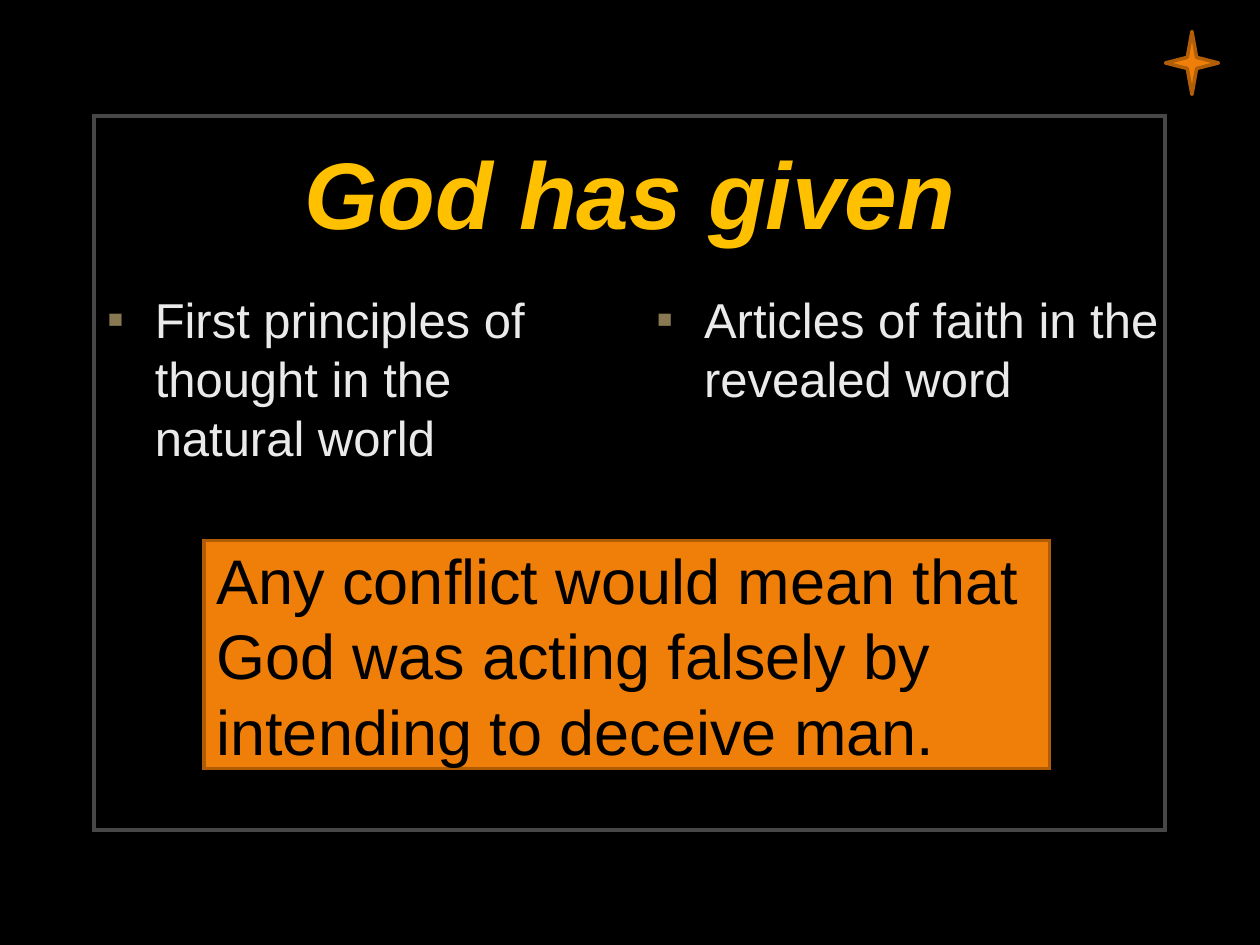
from dataclasses import dataclass

from lxml.etree import SubElement
from pptx import Presentation
from pptx.dml.color import RGBColor as Color
from pptx.enum.shapes import MSO_SHAPE as Preset
from pptx.enum.text import MSO_ANCHOR as Anchor, PP_ALIGN as Align
from pptx.oxml.ns import qn
from pptx.shapes.autoshape import Shape
from pptx.slide import Slide
from pptx.util import Inches, Pt


@dataclass(frozen=True)
class Theme:
    font: str = "Arial"
    background: str = "000000"
    frame: str = "474747"
    title: str = "FFC000"
    body: str = "EAEAEA"
    bullet: str = "887952"
    accent: str = "F07F09"
    callout_edge: str = "B05C05"
    star_edge: str = "B25E07"
    callout_text: str = "000000"
    title_size: float = 54
    body_size: float = 28
    callout_size: float = 36
    bullet_indent: float = 0.38


@dataclass(frozen=True)
class Area:
    left: float
    top: float
    width: float
    height: float

    def lengths(self) -> tuple[Inches, ...]:
        return tuple(map(Inches, (self.left, self.top, self.width, self.height)))


@dataclass(frozen=True)
class Column:
    left: float
    text: str


THEME = Theme()
COLUMNS = (
    Column(0.75, "First principles of thought in the natural world"),
    Column(5.11, "Articles of faith in the revealed word"),
)


def add_preset(slide: Slide, preset: Preset, area: Area, edge: str,
               weight: float, fill: str | None = None) -> Shape:
    shape = slide.shapes.add_shape(preset, *area.lengths())
    shape.shadow.inherit = False
    if fill:
        shape.fill.solid()
        shape.fill.fore_color.rgb = Color.from_string(fill)
    else:
        shape.fill.background()
    shape.line.color.rgb = Color.from_string(edge)
    shape.line.width = Pt(weight)
    if preset == Preset.RECTANGLE:
        SubElement(shape.line._get_or_add_ln(), qn("a:miter"), lim="800000")
    return shape


def add_bullet(para) -> None:
    properties = para._p.get_or_add_pPr()
    indent = Inches(THEME.bullet_indent)
    properties.set("marL", str(indent))
    properties.set("indent", str(-indent))
    color = SubElement(properties, qn("a:buClr"))
    SubElement(color, qn("a:srgbClr"), val=THEME.bullet)
    SubElement(properties, qn("a:buFont"), typeface=THEME.font)
    SubElement(properties, qn("a:buChar"), char="▪")


def write(box: Shape, text: str, size: float, color: str, align: Align = Align.LEFT,
          anchor: Anchor = Anchor.MIDDLE, strong: bool = False, bulleted: bool = False) -> None:
    frame = box.text_frame
    frame.word_wrap = True
    frame.vertical_anchor = anchor
    para = frame.paragraphs[0]
    para.alignment = align
    if bulleted:
        add_bullet(para)
    span = para.add_run()
    span.text = text
    font = span.font
    font.name, font.size = THEME.font, Pt(size)
    font.bold = font.italic = strong
    font.color.rgb = Color.from_string(color)


def build() -> None:
    """Build the slide and save the deck."""
    deck = Presentation()
    deck.slide_width, deck.slide_height = Inches(10), Inches(7.5)
    page = deck.slides.add_slide(deck.slide_layouts[6])
    page.background.fill.solid()
    page.background.fill.fore_color.rgb = Color.from_string(THEME.background)

    add_preset(page, Preset.RECTANGLE, Area(0.75, 0.92, 8.5, 5.67), THEME.frame, 2.25)

    title = page.shapes.add_textbox(*Area(0.75, 0.91, 8.5, 1.22).lengths())
    write(title, "God has given", THEME.title_size, THEME.title, Align.CENTER, strong=True)

    for column in COLUMNS:
        box = page.shapes.add_textbox(*Area(column.left, 2.25, 4.19, 4.33).lengths())
        write(box, column.text, THEME.body_size, THEME.body, anchor=Anchor.TOP, bulleted=True)

    callout = add_preset(page, Preset.RECTANGLE, Area(1.62, 4.29, 6.71, 1.81),
                         THEME.callout_edge, 2, THEME.accent)
    write(callout, "Any conflict would mean that God was acting falsely by intending to deceive man.",
          THEME.callout_size, THEME.callout_text)

    add_preset(page, Preset.STAR_4_POINT, Area(9.25, 0.25, 0.42, 0.5),
               THEME.star_edge, 2, THEME.accent)
    deck.save("out.pptx")


if __name__ == "__main__":
    build()
